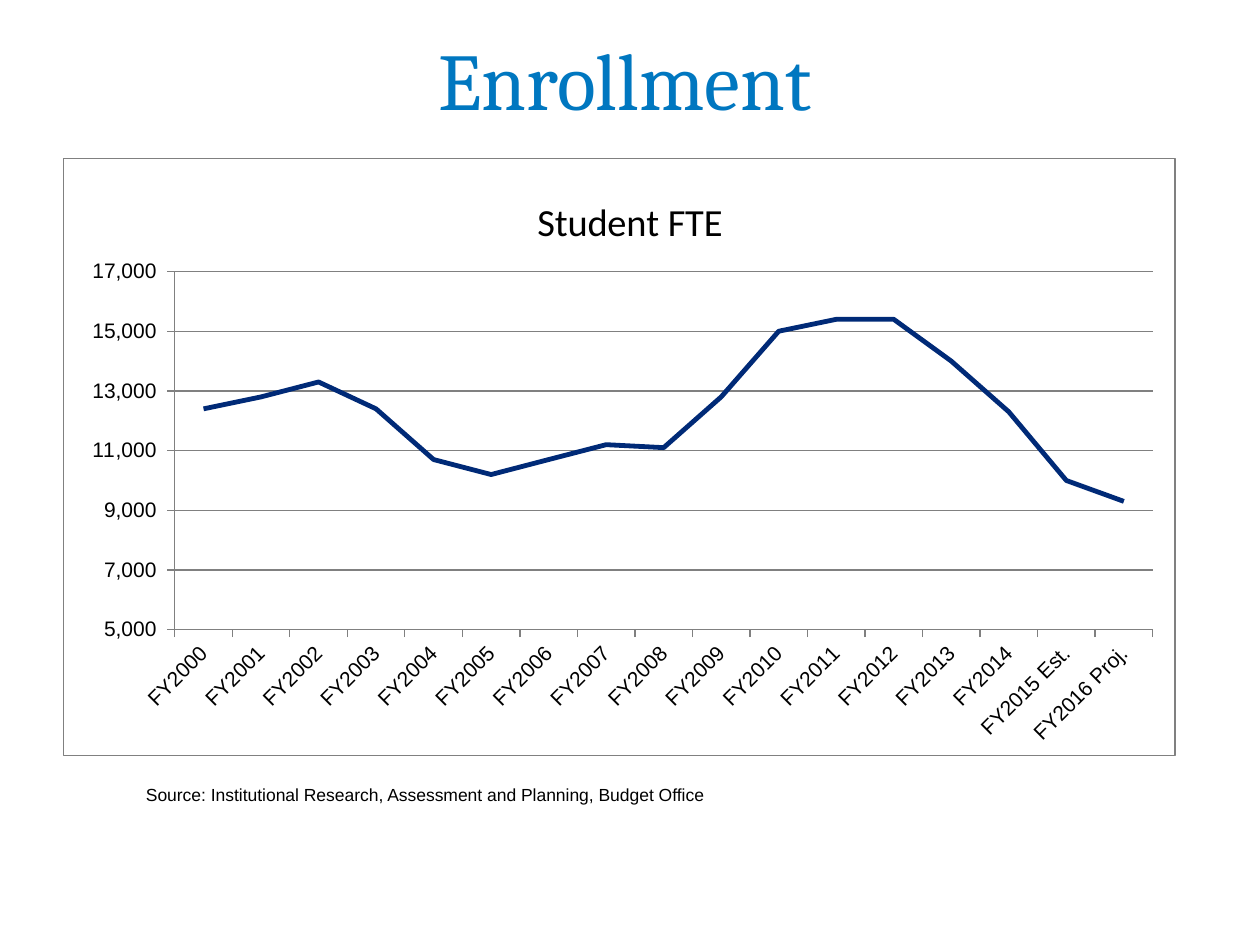
import pptx
import pptx.chart.data
import pptx.dml.color
import pptx.enum.chart
import pptx.enum.text
import pptx.oxml
import pptx.oxml.ns
import pptx.util
from pptx.util import Inches

YEARS = [f"FY{year}" for year in range(2000, 2015)] + ["FY2015 Est.", "FY2016 Proj."]
STUDENTS = [12400, 12800, 13300, 12400, 10700, 10200, 10700, 11200, 11100,
            12800, 15000, 15400, 15400, 14000, 12300, 10000, 9300]
NAMESPACES = pptx.oxml.ns.nsdecls("c", "a")


def color(value):
    """Turn a hex string into a colour."""
    return pptx.dml.color.RGBColor.from_string(value)


def style_font(font, name, size, fill="000000"):
    """Set the name, size and colour of a plain font."""
    font.name = name
    font.size = pptx.util.Pt(size)
    font.bold = False
    font.color.rgb = color(fill)


def style_line(line, fill, width):
    """Set the colour and width in points of a line."""
    line.color.rgb = color(fill)
    line.width = pptx.util.Pt(width)


def write_text(frame, text, name, size, fill="000000", align=None, anchor=None):
    """Write one formatted paragraph into a text frame."""
    frame.word_wrap = True
    if anchor is not None:
        frame.vertical_anchor = anchor
    para = frame.paragraphs[0]
    para.alignment = align
    span = para.add_run()
    span.text = text
    style_font(span.font, name, size, fill)


def set_layout(parent, index, **values):
    """Give a chart part a manual layout in fractions of the chart."""
    for old in parent.findall(pptx.oxml.ns.qn("c:layout")):
        parent.remove(old)
    parts = "".join(f'<c:{key} val="{value}"/>' for key, value in values.items())
    parent.insert(index, pptx.oxml.parse_xml(
        f"<c:layout {NAMESPACES}><c:manualLayout>{parts}</c:manualLayout></c:layout>"))


def add_title(page, left, top, width, height):
    """Place the slide title."""
    title = page.shapes.title
    title.left, title.top, title.width, title.height = left, top, width, height
    write_text(title.text_frame, "Enrollment", "Cambria", 46, fill="0077C0",
               align=pptx.enum.text.PP_ALIGN.CENTER,
               anchor=pptx.enum.text.MSO_ANCHOR.MIDDLE)


def style_axes(chart):
    """Format the year axis and the student axis."""
    for axis in (chart.category_axis, chart.value_axis):
        style_font(axis.tick_labels.font, "Arial", 12)
        style_line(axis.format.line, "808080", 0.75)
        axis.major_tick_mark = pptx.enum.chart.XL_TICK_MARK.OUTSIDE
    years, students = chart.category_axis, chart.value_axis
    body = years._element.find(pptx.oxml.ns.qn("c:txPr")).find(pptx.oxml.ns.qn("a:bodyPr"))
    body.set("rot", "-2700000")
    body.set("vert", "horz")
    students.minimum_scale, students.maximum_scale = 5000, 17000
    students.major_unit = 2000
    students.has_major_gridlines = True
    style_line(students.major_gridlines.format.line, "808080", 0.75)
    labels = students.tick_labels
    labels.number_format = '_(* #,##0_);_(* \\(#,##0\\);_(* "-"??_);_(@_)'
    labels.number_format_is_linked = False


def add_enrollment_chart(page, left, top, width, height):
    """Place the framed line chart of student numbers."""
    data = pptx.chart.data.CategoryChartData()
    data.categories = YEARS
    data.add_series("Student FTE", STUDENTS)
    chart = page.shapes.add_chart(pptx.enum.chart.XL_CHART_TYPE.LINE,
                                  left, top, width, height, data).chart
    style_font(chart.font, "Arial", 10)
    chart.has_legend = False
    chart.has_title = True
    write_text(chart.chart_title.text_frame, "Student FTE", "Calibri", 22)
    chart.chart_title.include_in_layout = False
    style_axes(chart)

    chart.plots[0].vary_by_categories = False
    series = chart.plots[0].series[0]
    series.smooth = False
    series.marker.style = pptx.enum.chart.XL_MARKER_STYLE.NONE
    style_line(series.format.line, "002A77", 2.75)

    root = chart._chartSpace
    set_layout(chart.chart_title._element, 1, xMode="edge", yMode="edge", x=0.42, y=0.05)
    set_layout(root.chart.plotArea, 0, layoutTarget="inner", xMode="edge", yMode="edge",
               x=0.1, y=0.19, w=0.88, h=0.6)
    root.chart.addnext(pptx.oxml.parse_xml(
        f'<c:spPr {NAMESPACES}><a:noFill/><a:ln w="{pptx.util.Pt(0.75)}"><a:solidFill>'
        '<a:srgbClr val="808080"/></a:solidFill></a:ln></c:spPr>'))


def add_source(page, left, top, width, height):
    """Place the source line below the chart."""
    box = page.shapes.add_textbox(left, top, width, height)
    write_text(box.text_frame,
               "Source: Institutional Research, Assessment and Planning, Budget Office",
               "Arial", 10)
    box.text_frame.auto_size = pptx.enum.text.MSO_AUTO_SIZE.SHAPE_TO_FIT_TEXT


def main():
    """Build and save the deck."""
    deck = pptx.Presentation()
    deck.slide_width, deck.slide_height = Inches(10), Inches(7.5)
    page = deck.slides.add_slide(deck.slide_layouts.get_by_name("Title Only"))
    add_title(page, Inches(-0.04), Inches(0), Inches(10), Inches(1.25))
    add_enrollment_chart(page, Inches(0.5), Inches(1.25), Inches(8.83), Inches(4.75))
    add_source(page, Inches(1.06), Inches(6.17), Inches(8.17), Inches(0.27))
    deck.save("out.pptx")


if __name__ == "__main__":
    main()
